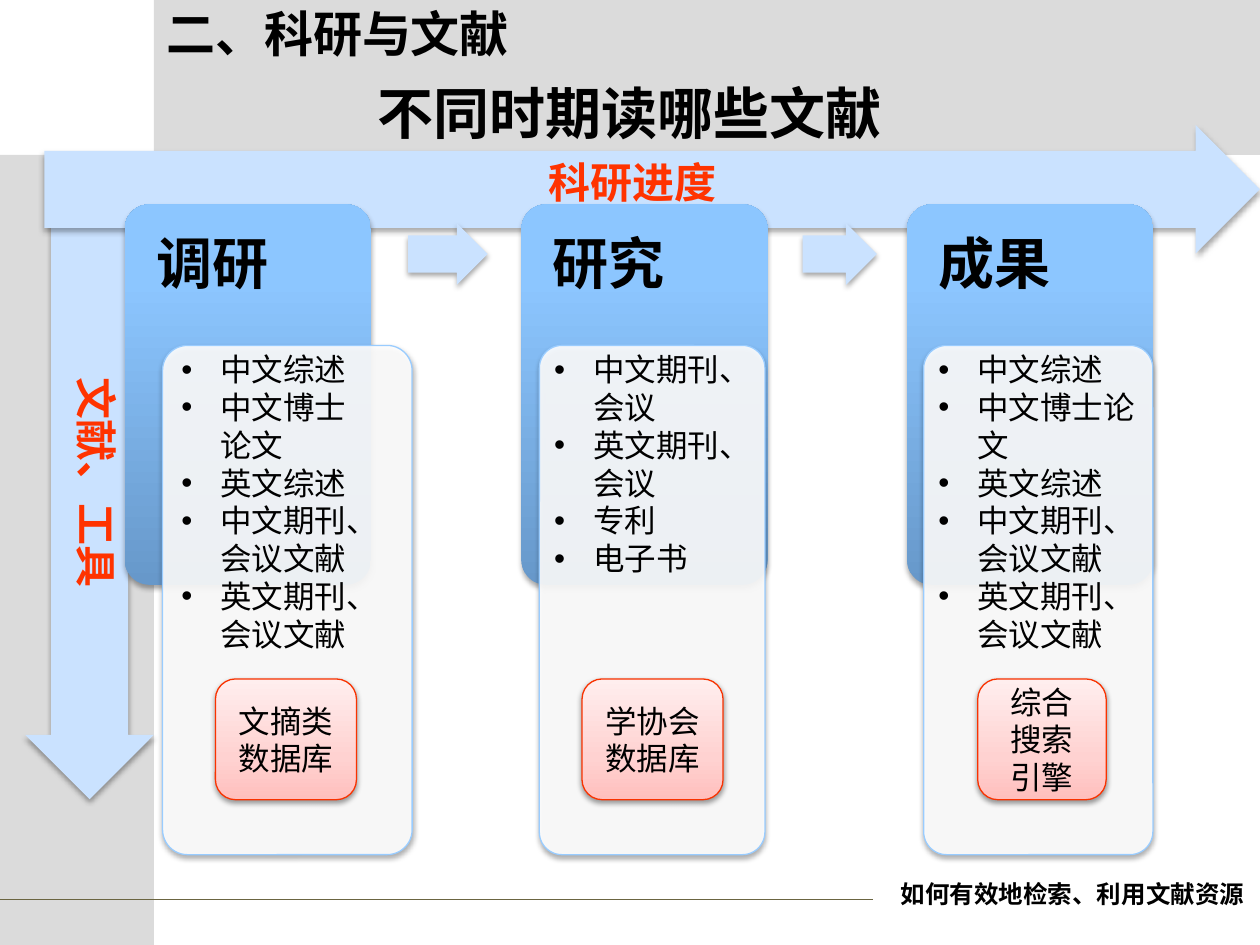
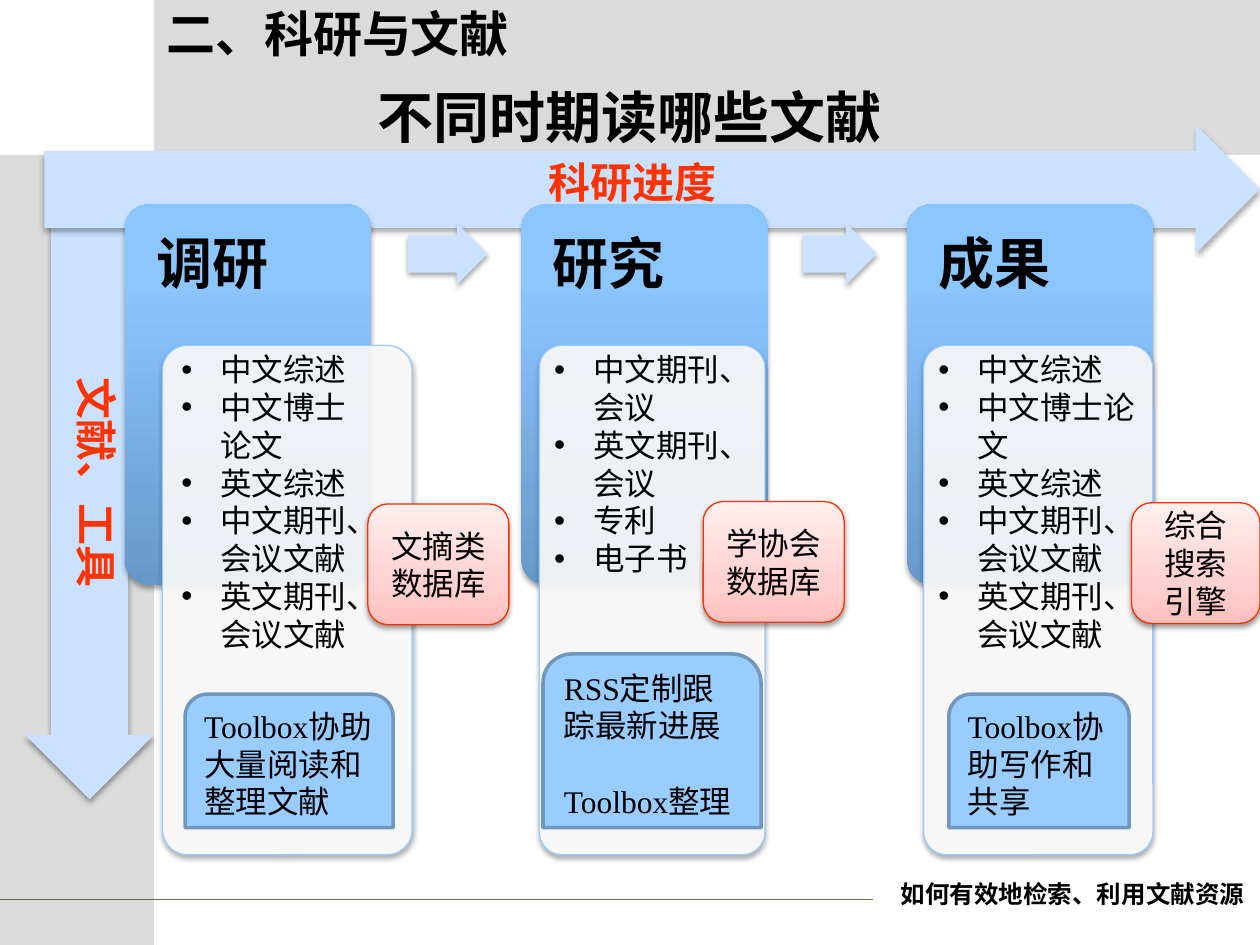
import dataclasses

import lxml.etree
import pptx
import pptx.dml.color
import pptx.enum.dml
import pptx.enum.lang
import pptx.enum.shapes
import pptx.enum.text
import pptx.oxml.ns
import pptx.util

Pt = pptx.util.Pt
RGB = pptx.dml.color.RGBColor.from_string
qn = pptx.oxml.ns.qn
SHAPE = pptx.enum.shapes.MSO_SHAPE
ALIGN = pptx.enum.text.PP_ALIGN
ANCHOR = pptx.enum.text.MSO_ANCHOR
SUB = lxml.etree.SubElement


@dataclasses.dataclass(frozen=True)
class Theme:
    font: str = "Times New Roman"
    ink: str = "000000"
    accent: str = "FF3300"
    band: str = "DBDBDB"
    rule: str = "6B6541"
    arrow: str = "CAE2FF"
    card: str = "FFFFFF"
    card_line: str = "99CCFF"
    note: str = "99CCFF"
    note_line: str = "7197BD"
    database_line: str = "F93200"
    stage_fill: tuple = ((0, "6798CA"), (80, "8CC6FF"), (100, "8EC7FF"))
    database_fill: tuple = ((0, "FFBFBD"), (35, "FFD2D1"), (100, "FFEEEE"))
    title: int = 32
    chapter: int = 28
    axis: int = 24
    body: int = 18
    footer: int = 14


theme = Theme()


def add_box(s, kind, at, fill=None, line=None, width=0.75, shadow=0, alpha=100, adj=()):
    sp = s.shapes.add_shape(kind, *map(Pt, at))
    for i, value in enumerate(adj):
        sp.adjustments[i] = value
    if fill is None:
        sp.fill.background()
    elif isinstance(fill, str):
        sp.fill.solid()
        sp.fill.fore_color.rgb = RGB(fill)
        if alpha < 100:
            color = sp._element.spPr.find(".//" + qn("a:srgbClr"))
            SUB(color, qn("a:alpha"), val=str(alpha * 1000))
    else:
        sp.fill.gradient()
        sp.fill.gradient_angle = 90
        stops = sp._element.spPr.find(".//" + qn("a:gsLst"))
        for stop in list(stops):
            stops.remove(stop)
        for place, color in fill:
            stop = SUB(stops, qn("a:gs"), pos=str(place * 1000))
            SUB(stop, qn("a:srgbClr"), val=color)
    if line:
        sp.line.color.rgb = RGB(line)
        sp.line.width = Pt(width)
    else:
        sp.line.fill.background()
    sp.shadow.inherit = False
    if shadow:
        effects = sp._element.spPr.find(qn("a:effectLst"))
        outer = SUB(effects, qn("a:outerShdw"), blurRad=str(Pt(3.1)), dist=str(Pt(1.8)),
                    dir="5400000", algn="ctr", rotWithShape="0")
        color = SUB(outer, qn("a:srgbClr"), val="000000")
        SUB(color, qn("a:alpha"), val=str(shadow * 1000))
    return sp


def write(sp, lines, size, color=theme.ink, bold=False, align=ALIGN.LEFT, anchor=ANCHOR.TOP,
          inset=(7.2, 3.6, 7.2, 3.6), spacing=None, gap=0, bullet=False):
    tf = sp.text_frame
    left, top, right, bottom = map(Pt, inset)
    frame = {"word_wrap": True, "vertical_anchor": anchor, "margin_left": left,
             "margin_top": top, "margin_right": right, "margin_bottom": bottom}
    for name, value in frame.items():
        setattr(tf, name, value)
    for i, line in enumerate(lines):
        p = tf.add_paragraph() if i else tf.paragraphs[0]
        p.alignment = align
        if spacing:
            p.line_spacing = spacing
        if i and gap:
            p.space_before = Pt(gap)
        if bullet:
            pPr = p._p.get_or_add_pPr()
            pPr.set("marL", str(Pt(22.3)))
            pPr.set("indent", str(-Pt(22.3)))
            SUB(pPr, qn("a:buFont"), typeface="Arial")
            SUB(pPr, qn("a:buChar"), char="•")
        r = p.add_run()
        r.text = line
        style = {"name": theme.font, "size": Pt(size), "bold": bold,
                 "language_id": pptx.enum.lang.MSO_LANGUAGE_ID.SIMPLIFIED_CHINESE}
        for name, value in style.items():
            setattr(r.font, name, value)
        r.font.color.rgb = RGB(color)


review = ["中文综述", "中文博士论文", "英文综述", "中文期刊、会议文献", "英文期刊、会议文献"]
research = ["中文期刊、会议", "英文期刊、会议", "专利", "电子书"]
stages = [
    {"name": "调研", "left": 71.3, "card": (92.9, 142.6), "list": (96.5, 121), "reading": review},
    {"name": "研究", "left": 298, "card": (308.2, 128.9), "list": (309.6, 133.9), "reading": research},
    {"name": "成果", "left": 518.4, "card": (527.8, 131), "list": (529.2, 127.5), "reading": review},
]
step_arrows = [(233.3, 45.4), (458.6, 42.5)]
databases = ["文摘类数据库", "学协会数据库", "综合搜索引擎"]
database_widths = [80.6, 80.6, 73.4]
slides = [
    {"title_spacing": 0.9, "database_at": [(123.1, 388), (332.6, 388), (558.7, 388)], "notes": []},
    {"title_spacing": None, "database_at": [(210.2, 288), (401.8, 286.6), (646.6, 287.3)],
     "notes": [((105.8, 396.7, 118.8, 76.3), ["Toolbox协助大量阅读和整理文献"]),
               ((310.3, 373.7, 124.6, 99.3), ["RSS定制跟踪最新进展", "Toolbox整理"]),
               ((542.2, 396.7, 103, 76.3), ["Toolbox协助写作和共享"])]},
]

prs = pptx.Presentation()
prs.slide_width, prs.slide_height = Pt(720), Pt(540)

for page in slides:
    s = prs.slides.add_slide(prs.slide_layouts[6])
    add_box(s, SHAPE.RECTANGLE, (0, 88.5, 88, 451.5), theme.band)
    add_box(s, SHAPE.RECTANGLE, (88, 0, 632, 88.5), theme.band)
    rule = s.shapes.add_connector(pptx.enum.shapes.MSO_CONNECTOR.STRAIGHT,
                                  Pt(0), Pt(514), Pt(499), Pt(514))
    rule.line.color.rgb = RGB(theme.rule)
    rule.line.width = Pt(0.75)
    SUB(rule._element.spPr, qn("a:effectLst"))

    for label, at, turn in [("文献、工具", (-118.8, 250, 340, 73.4), 90),
                            ("科研进度", (25.4, 71.5, 694.6, 73.4), 0)]:
        axis = add_box(s, SHAPE.RIGHT_ARROW, at, theme.arrow, shadow=35, adj=(0.6, 0.5))
        axis.rotation = turn
        write(axis, [label], theme.axis, theme.accent, bold=True, align=ALIGN.CENTER)

    title = s.shapes.add_textbox(Pt(36), Pt(21.6), Pt(648), Pt(90))
    write(title, ["不同时期读哪些文献"], theme.title, bold=True, align=ALIGN.CENTER,
          anchor=ANCHOR.MIDDLE, spacing=page["title_spacing"])

    for i, stage in enumerate(stages):
        add_box(s, SHAPE.ROUNDED_RECTANGLE, (stage["left"], 116.8, 140.6, 217.4),
                theme.stage_fill, shadow=35, adj=(0.1,))
        head = s.shapes.add_textbox(Pt(stage["left"]), Pt(116.8), Pt(140.6), Pt(56))
        write(head, [stage["name"]], theme.title, bold=True, inset=(18, 18, 18, 9.4), spacing=0.9)
        left, width = stage["card"]
        add_box(s, SHAPE.ROUNDED_RECTANGLE, (left, 197.4, width, 291), theme.card,
                theme.card_line, shadow=35, alpha=90, adj=(0.1,))
        if i < len(step_arrows):
            left, width = step_arrows[i]
            add_box(s, SHAPE.RIGHT_ARROW, (left, 127.5, width, 35.3), theme.arrow,
                    shadow=35, adj=(0.6, 0.5))

    for name, width, (left, top) in zip(databases, database_widths, page["database_at"]):
        database = add_box(s, SHAPE.ROUNDED_RECTANGLE, (left, top, width, 69),
                           theme.database_fill, theme.database_line, shadow=38)
        write(database, [name], theme.body, align=ALIGN.CENTER, anchor=ANCHOR.MIDDLE)

    for stage in stages:
        left, width = stage["list"]
        reading = s.shapes.add_textbox(Pt(left), Pt(196.6), Pt(width), Pt(181.4))
        write(reading, stage["reading"], theme.body, bullet=True)

    for at, lines in page["notes"]:
        note = add_box(s, SHAPE.ROUND_2_SAME_RECTANGLE, at, theme.note, theme.note_line, width=2)
        write(note, lines, theme.body, gap=21.6)

    chapter = s.shapes.add_textbox(Pt(88), Pt(0), Pt(507.6), Pt(37.5))
    write(chapter, ["二、科研与文献"], theme.chapter, bold=True, anchor=ANCHOR.MIDDLE)
    footer = s.shapes.add_textbox(Pt(483), Pt(491.8), Pt(228.2), Pt(37.5))
    write(footer, ["如何有效地检索、利用文献资源"], theme.footer, bold=True, align=ALIGN.RIGHT,
          anchor=ANCHOR.MIDDLE, inset=(7.2, 3.6, 0, 3.6))

prs.save("out.pptx")
